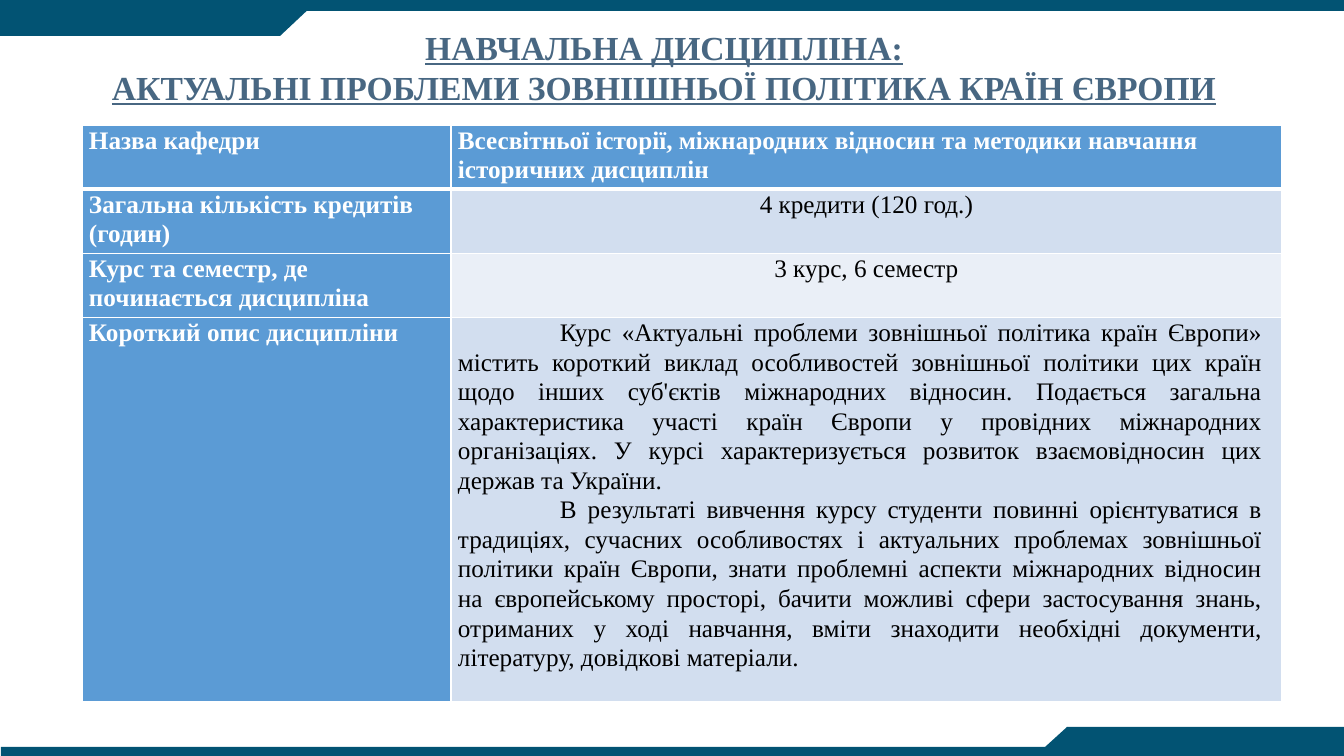
from dataclasses import dataclass

from lxml.etree import SubElement
from pptx import Presentation
from pptx.dml.color import RGBColor
from pptx.enum.shapes import MSO_SHAPE as Shape
from pptx.enum.text import MSO_ANCHOR as Anchor, PP_ALIGN as Align
from pptx.oxml.ns import qn
from pptx.util import Emu, Pt


@dataclass(frozen=True)
class Theme:
    font: str = "Times New Roman"
    frame: str = "025373"
    title: str = "486782"
    header: str = "5B9BD5"
    band_dark: str = "D2DEEF"
    band_light: str = "EAEFF7"
    white: str = "FFFFFF"
    black: str = "000000"
    title_size: int = 24
    body_size: int = 18


theme = Theme()
WIDTH, HEIGHT = 1344, 756
SCALE = 12192000 / WIDTH


def px(length):
    return Emu(round(length * SCALE))


def style_font(font, size, color, bold):
    font.name = theme.font
    font.size = Pt(size)
    font.bold = bold
    font.color.rgb = RGBColor.from_string(color)


deck = Presentation()
deck.slide_width, deck.slide_height = px(WIDTH), px(HEIGHT)
page = deck.slides.add_slide(deck.slide_layouts[6])

frame_parts = [
    (Shape.RECTANGLE, 0, 0, 1344, 11, 0),
    (Shape.RECTANGLE, 1, 747, 1343, 9, 0),
    (Shape.RECTANGLE, 0, 5, 280, 31, 0),
    (Shape.FLOWCHART_MERGE, 247, 5, 66, 31, 0),
    (Shape.RECTANGLE, 1067, 727, 277, 29, 0),
    (Shape.FLOWCHART_MERGE, 1034, 727, 66, 30, 180),
]
for kind, left, top, width, height, turn in frame_parts:
    part = page.shapes.add_shape(kind, px(left), px(top), px(width), px(height))
    part.rotation = turn
    part.shadow.inherit = False
    part.fill.solid()
    part.fill.fore_color.rgb = RGBColor.from_string(theme.frame)
    part.line.fill.background()

title_lines = [
    "НАВЧАЛЬНА ДИСЦИПЛІНА:",
    "АКТУАЛЬНІ ПРОБЛЕМИ ЗОВНІШНЬОЇ ПОЛІТИКА КРАЇН ЄВРОПИ",
]
title_box = page.shapes.add_textbox(px(56), px(21), px(1216), px(92))
title_frame = title_box.text_frame
title_frame.word_wrap = True
title_frame.vertical_anchor = Anchor.MIDDLE
title_frame.text = "\n".join(title_lines)
for para in title_frame.paragraphs:
    para.alignment = Align.CENTER
    style_font(para.font, theme.title_size, theme.title, True)
    para.font.underline = True

rows = [
    ("Назва кафедри",
     "Всесвітньої історії, міжнародних відносин та методики навчання історичних дисциплін",
     theme.header, Align.LEFT, 64),
    ("Загальна кількість кредитів (годин)", "4 кредити (120 год.)",
     theme.band_dark, Align.CENTER, 64),
    ("Курс та семестр, де починається дисципліна", "3 курс, 6 семестр",
     theme.band_light, Align.CENTER, 64),
    ("Короткий опис дисципліни",
     "Курс «Актуальні проблеми зовнішньої політика країн Європи» містить короткий виклад "
     "особливостей зовнішньої політики цих країн щодо інших суб'єктів міжнародних відносин. "
     "Подається загальна характеристика участі країн Європи у провідних міжнародних "
     "організаціях. У курсі характеризується розвиток взаємовідносин цих держав та України.\n"
     "В результаті вивчення курсу студенти повинні орієнтуватися в традиціях, сучасних "
     "особливостях і актуальних проблемах зовнішньої політики країн Європи, знати проблемні "
     "аспекти міжнародних відносин на європейському просторі, бачити можливі сфери "
     "застосування знань, отриманих у ході навчання, вміти знаходити необхідні документи, "
     "літературу, довідкові матеріали.",
     theme.band_dark, Align.JUSTIFY, 384),
]
table_height = sum(row[-1] for row in rows)
table = page.shapes.add_table(len(rows), 2, px(82), px(125), px(1200), px(table_height)).table
table.horz_banding = False
for column, width in zip(table.columns, (369, 831)):
    column.width = px(width)

for row_index, (label, content, fill, alignment, height) in enumerate(rows):
    table.rows[row_index].height = px(height)
    cells = [(label, theme.header, Align.LEFT), (content, fill, alignment)]
    for column_index, (text, color, align) in enumerate(cells):
        cell = table.cell(row_index, column_index)
        justified = align == Align.JUSTIFY
        cell.margin_left = px(7)
        cell.margin_right = px(20 if justified else 7)
        cell.margin_top = cell.margin_bottom = 0

        properties = cell._tc.get_or_add_tcPr()
        for side in ("lnL", "lnR", "lnT", "lnB"):
            header_edge = (row_index, side) in ((0, "lnB"), (1, "lnT"))
            border = SubElement(properties, qn(f"a:{side}"), w=str(Pt(3 if header_edge else 1)))
            paint = SubElement(border, qn("a:solidFill"))
            SubElement(paint, qn("a:srgbClr"), val=theme.white)
        cell.fill.solid()
        cell.fill.fore_color.rgb = RGBColor.from_string(color)

        on_header = color == theme.header
        cell.text_frame.text = text
        for para in cell.text_frame.paragraphs:
            para.alignment = align
            para.line_spacing = 1.06
            if justified:
                para._p.get_or_add_pPr().set("indent", str(px(102)))
            style_font(para.font, theme.body_size,
                       theme.white if on_header else theme.black, on_header)

deck.save("out.pptx")
